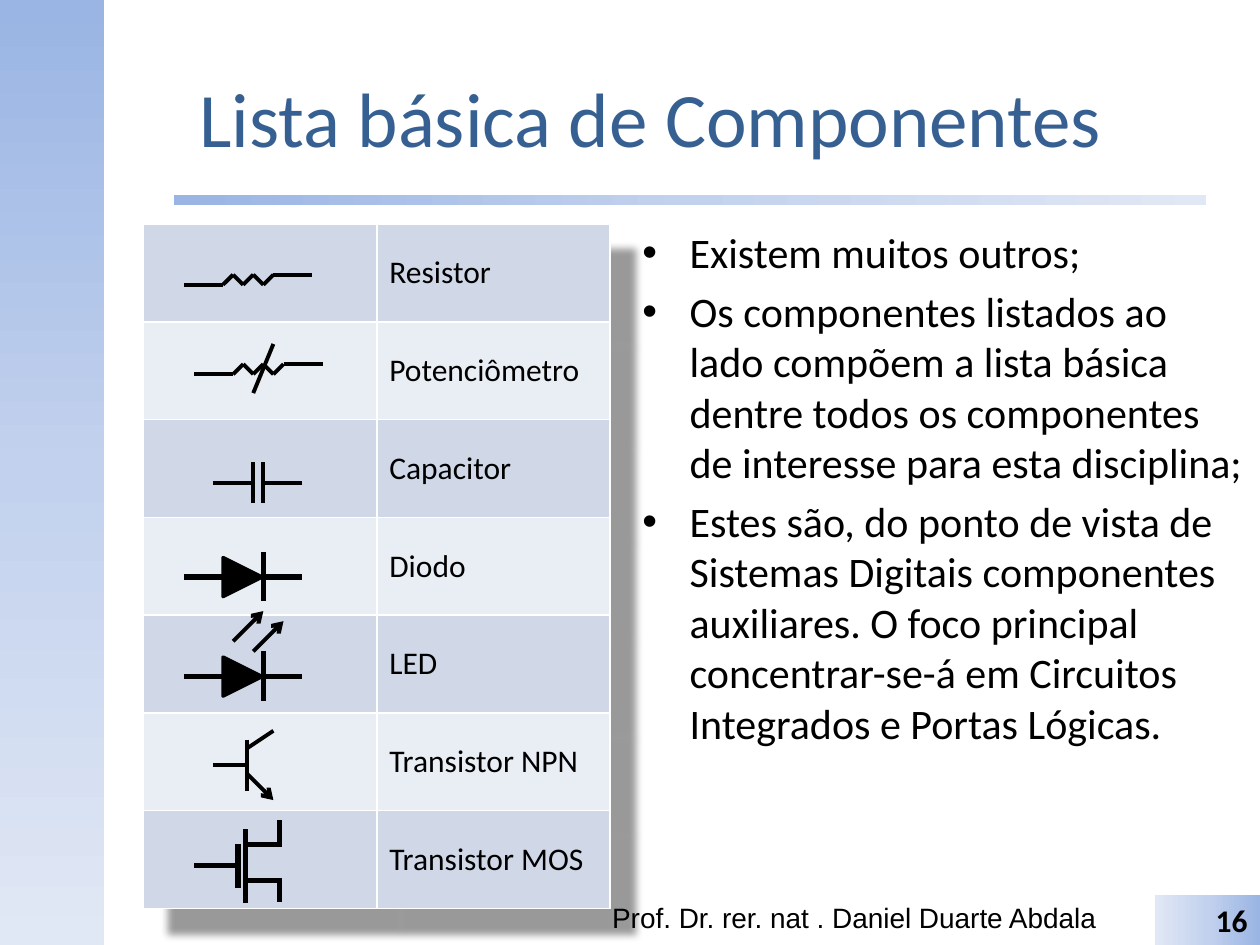
from dataclasses import dataclass
from itertools import pairwise

from lxml import etree
from pptx import Presentation
from pptx.dml.color import RGBColor
from pptx.enum import shapes, text
from pptx.oxml import parse_xml
from pptx.oxml.ns import nsdecls, qn
from pptx.util import Inches, Pt


@dataclass(frozen=True)
class Theme:
    title_color: str = "376092"
    ink: str = "000000"
    border: str = "FFFFFF"
    bands: tuple = ("D0D8E8", "E9EDF4")
    gradient: tuple = ((0, "9AB5E4"), (50, "C2D1ED"), (100, "E1E8F5"))
    font: str = "Calibri"
    footer_font: str = "Arial"
    title_size: float = 44
    body_size: float = 24
    label_size: float = 18
    footer_size: float = 16
    thin: float = 2.25
    thick: float = 3


class SlideBuilder:
    def __init__(self, slide, theme):
        self.slide = slide
        self.theme = theme
        self.target = slide.shapes

    def style(self, paragraph, size, color=None, font=None, bold=False):
        paragraph.font.size = Pt(size)
        paragraph.font.name = font or self.theme.font
        paragraph.font.bold = bold
        paragraph.font.color.rgb = RGBColor.from_string(color or self.theme.ink)

    def gradient_shape(self, kind, box, angle):
        shape = self.slide.shapes.add_shape(kind, *map(Inches, box))
        shape.shadow.inherit = False
        shape.line.fill.background()
        stops = "".join(
            f'<a:gs pos="{position * 1000}"><a:srgbClr val="{color}"/></a:gs>'
            for position, color in self.theme.gradient)
        shape.fill.gradient()
        old = shape.element.spPr.find(qn("a:gradFill"))
        new = parse_xml(
            f'<a:gradFill {nsdecls("a")} rotWithShape="1"><a:gsLst>{stops}</a:gsLst>'
            f'<a:lin ang="{angle * 60000}" scaled="0"/></a:gradFill>')
        shape.element.spPr.replace(old, new)
        return shape

    def text_box(self, box, lines, size, color=None, font=None, align=None,
                 anchor=text.MSO_ANCHOR.TOP, bullets=False):
        frame = self.slide.shapes.add_textbox(*map(Inches, box)).text_frame
        frame.word_wrap = True
        frame.vertical_anchor = anchor
        frame.text = "\n".join(lines)
        for paragraph in frame.paragraphs:
            paragraph.alignment = align
            self.style(paragraph, size, color, font)
            if bullets:
                self.bullet(paragraph, size)

    def bullet(self, paragraph, size):
        paragraph.space_before = Pt(size * 0.2)
        properties = paragraph._p.get_or_add_pPr()
        properties.set("marL", str(Pt(27)))
        properties.set("indent", str(-Pt(27)))
        etree.SubElement(properties, qn("a:buFont")).set("typeface", "Arial")
        etree.SubElement(properties, qn("a:buChar")).set("char", "•")

    def table(self, box, labels):
        table = self.slide.shapes.add_table(len(labels), 2, *map(Inches, box)).table
        for row, label in enumerate(labels):
            table.cell(row, 1).text = label
            self.style(table.cell(row, 1).text_frame.paragraphs[0], self.theme.label_size)
            for column in range(2):
                cell = table.cell(row, column)
                cell.vertical_anchor = text.MSO_ANCHOR.MIDDLE
                self.cell_borders(cell)
                cell.fill.solid()
                cell.fill.fore_color.rgb = RGBColor.from_string(self.theme.bands[row % 2])
        # Soft shadow towards the lower right
        table._tbl.tblPr.insert(0, parse_xml(
            f'<a:effectLst {nsdecls("a")}><a:outerShdw blurRad="{Inches(0.06)}" '
            f'dist="{Inches(0.28)}" dir="2700000" algn="tl" rotWithShape="0">'
            '<a:srgbClr val="000000"><a:alpha val="40000"/></a:srgbClr>'
            '</a:outerShdw></a:effectLst>'))

    def cell_borders(self, cell):
        properties = cell._tc.get_or_add_tcPr()
        for side in ("lnL", "lnR", "lnT", "lnB"):
            properties.append(parse_xml(
                f'<a:{side} {nsdecls("a")} w="{Pt(1)}"><a:solidFill>'
                f'<a:srgbClr val="{self.theme.border}"/></a:solidFill></a:{side}>'))

    def begin_symbol(self):
        self.target = self.slide.shapes.add_group_shape().shapes

    def wire(self, *points, width=None, arrow=False):
        for start, end in pairwise(points):
            line = self.target.add_connector(
                shapes.MSO_CONNECTOR.STRAIGHT, *map(Inches, start + end))
            line.line.width = Pt(width or self.theme.thin)
            line.line.color.rgb = RGBColor.from_string(self.theme.ink)
            if arrow:
                etree.SubElement(line.line._get_or_add_ln(), qn("a:tailEnd")).set("type", "arrow")
            etree.SubElement(line.element.spPr, qn("a:effectLst"))

    def zigzag(self, x, y):
        steps = ((0, 0), (0.31, 0), (0.39, 1), (0.47, 0), (0.55, 1),
                 (0.63, 0), (0.71, 1), (1.02, 1))
        self.wire(*((x + dx, y - 0.08 * up) for dx, up in steps))

    def diode(self, x, y):
        thick = self.theme.thick
        triangle = self.target.add_shape(
            shapes.MSO_SHAPE.ISOSCELES_TRIANGLE,
            *map(Inches, (x + 0.31, y - 0.155, 0.31, 0.31)))
        triangle.rotation = 90
        triangle.shadow.inherit = False
        triangle.fill.solid()
        triangle.fill.fore_color.rgb = RGBColor.from_string(self.theme.ink)
        triangle.line.color.rgb = RGBColor.from_string(self.theme.ink)
        triangle.line.width = Pt(2)
        self.wire((x, y), (x + 0.31, y), width=thick)
        self.wire((x + 0.63, y), (x + 0.94, y), width=thick)
        self.wire((x + 0.63, y - 0.2), (x + 0.63, y + 0.19), width=thick)


def draw_symbols(builder):
    thick = builder.theme.thick

    # Resistor
    builder.begin_symbol()
    builder.zigzag(1.46, 2.26)

    # Potentiometer
    builder.begin_symbol()
    builder.zigzag(1.54, 2.97)
    builder.wire((2.01, 3.12), (2.17, 2.73))

    # Capacitor
    builder.begin_symbol()
    for plate, lead in ((2.01, 1.69), (2.09, 2.4)):
        builder.wire((plate, 3.67), (plate, 3.99))
        builder.wire((lead, 3.83), (plate, 3.83))

    # Diode
    builder.begin_symbol()
    builder.diode(1.46, 4.58)

    # LED
    builder.begin_symbol()
    builder.diode(1.46, 5.37)
    for x, y in ((1.85, 5.09), (2.01, 5.17)):
        builder.wire((x, y), (x + 0.24, y - 0.24), arrow=True)

    # NPN transistor
    builder.begin_symbol()
    builder.wire((1.96, 5.87), (1.96, 6.28))
    builder.wire((1.69, 6.07), (1.96, 6.07))
    builder.wire((1.96, 6.14), (2.17, 6.35), arrow=True)
    builder.wire((1.96, 5.94), (2.17, 5.8))

    # MOS transistor
    builder.begin_symbol()
    builder.wire((1.54, 6.87), (1.89, 6.87), width=thick)
    builder.wire((1.89, 6.7), (1.89, 7.05), width=thick)
    builder.wire((1.95, 6.58), (1.95, 7.17), width=thick)
    for y, end in ((6.7, 6.51), (6.99, 7.16)):
        builder.wire((1.95, y), (2.24, y), width=thick)
        builder.wire((2.22, y), (2.22, end), width=thick)


def main():
    presentation = Presentation()
    presentation.slide_width, presentation.slide_height = Inches(10), Inches(7.5)
    theme = Theme()
    builder = SlideBuilder(presentation.slides.add_slide(presentation.slide_layouts[6]), theme)

    # Side band and title rule
    builder.gradient_shape(shapes.MSO_SHAPE.RECTANGLE, (0, 0, 0.83, 7.5), 90)
    rule = builder.gradient_shape(shapes.MSO_SHAPE.ROUNDED_RECTANGLE, (1.38, 1.55, 8.19, 0.08), 0)
    rule.adjustments[0] = 0

    # Title, body and footer
    builder.text_box((0.83, 0.3, 8.67, 1.25), ["Lista básica de Componentes"],
                     theme.title_size, theme.title_color, align=text.PP_ALIGN.CENTER,
                     anchor=text.MSO_ANCHOR.MIDDLE)
    builder.text_box((5, 1.75, 5, 5.15), [
        "Existem muitos outros;",
        "Os componentes listados ao lado compõem a lista básica dentre todos os "
        "componentes de interesse para esta disciplina;",
        "Estes são, do ponto de vista de Sistemas Digitais componentes auxiliares. "
        "O foco principal concentrar-se-á em Circuitos Integrados e Portas Lógicas.",
    ], theme.body_size, bullets=True)
    builder.text_box((4.76, 7.1, 4.19, 0.4), ["Prof. Dr. rer. nat . Daniel Duarte Abdala"],
                     theme.footer_size, font=theme.footer_font)

    # Component table
    builder.table((1.14, 1.78, 3.7, 5.43), [
        "Resistor", "Potenciômetro", "Capacitor", "Diodo", "LED",
        "Transistor NPN", "Transistor MOS"])

    # Slide number
    number = builder.gradient_shape(shapes.MSO_SHAPE.RECTANGLE, (9.17, 7.1, 0.83, 0.4), 180)
    number.text_frame.text = "16"
    paragraph = number.text_frame.paragraphs[0]
    paragraph.alignment = text.PP_ALIGN.RIGHT
    builder.style(paragraph, theme.label_size, bold=True)

    # Circuit symbols
    draw_symbols(builder)
    presentation.save("out.pptx")


if __name__ == "__main__":
    main()
